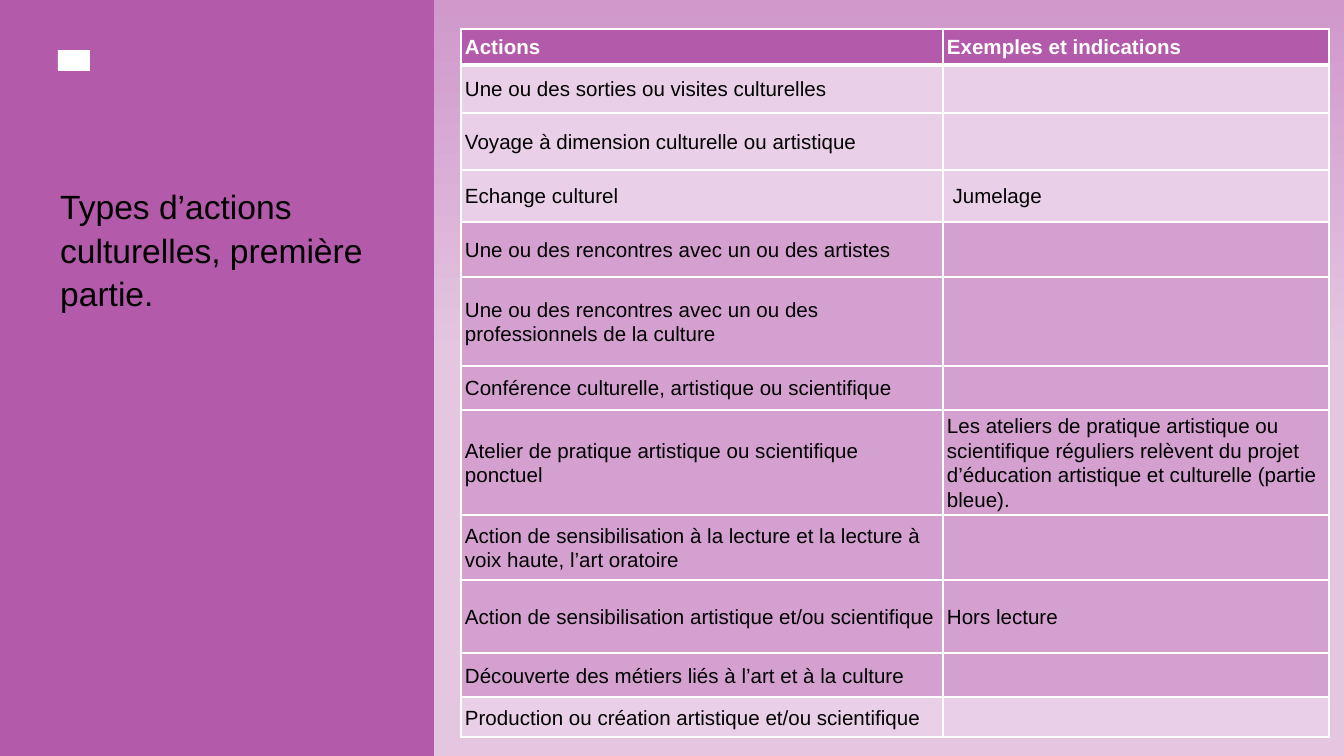
from typing import NamedTuple

from lxml import etree
from pptx import Presentation
from pptx import util as u
from pptx.dml.color import RGBColor
from pptx.enum import shapes, text
from pptx.oxml.ns import qn

EMU_PER_PX = 914400 / 134.4
FONT = "Arial"
LINE_SPACING = 1.07
COLORS = {
    "purple": "B35BAA",
    "haze_top": "D098CB",
    "haze": "E4C6E1",
    "pale": "E9CFE7",
    "mauve": "D4A0D0",
    "white": "FFFFFF",
    "black": "000000",
}


class Box(NamedTuple):
    left: int
    top: int
    width: int
    height: int


class Action(NamedTuple):
    height: int
    fill: str
    label: str
    example: str = ""


SIDE_PANEL = Box(0, 0, 434, 756)
BACKDROP = Box(434, 0, 910, 756)
MARKER = Box(58, 50, 32, 21)
TITLE = Box(47, 177, 360, 136)
TABLE_LEFT, TABLE_TOP = 461, 29
COLUMN_WIDTHS = (482, 386)

ACTIONS = [
    Action(36, "purple", "Actions", "Exemples et indications"),
    Action(48, "pale", "Une ou des sorties ou visites culturelles"),
    Action(57, "pale", "Voyage à dimension culturelle ou artistique"),
    Action(52, "pale", "Echange culturel", " Jumelage"),
    Action(55, "mauve", "Une ou des rencontres avec un ou des artistes"),
    Action(89, "mauve", "Une ou des rencontres avec un ou des professionnels de la culture"),
    Action(44, "mauve", "Conférence culturelle, artistique ou scientifique"),
    Action(97, "mauve", "Atelier de pratique artistique ou scientifique ponctuel",
           "Les ateliers de pratique artistique ou scientifique réguliers relèvent "
           "du projet d’éducation artistique et culturelle (partie bleue)."),
    Action(65, "mauve", "Action de sensibilisation à la lecture et la lecture à voix haute, "
           "l’art oratoire"),
    Action(73, "mauve", "Action de sensibilisation artistique et/ou scientifique", "Hors lecture"),
    Action(44, "mauve", "Découverte des métiers liés à l’art et à la culture"),
    Action(40, "pale", "Production ou création artistique et/ou scientifique"),
]


def px(length: int) -> u.Emu:
    return u.Emu(round(length * EMU_PER_PX))


def rgb(name: str) -> RGBColor:
    return RGBColor.from_string(COLORS[name])


def add_rectangle(slide, box: Box, color: str):
    rectangle = slide.shapes.add_shape(shapes.MSO_SHAPE.RECTANGLE, *map(px, box))
    rectangle.shadow.inherit = False
    rectangle.line.fill.background()
    rectangle.fill.solid()
    rectangle.fill.fore_color.rgb = rgb(color)
    return rectangle


def add_backdrop(slide) -> None:
    fill = add_rectangle(slide, BACKDROP, "haze").fill
    fill.gradient()
    fill.gradient_angle = 270
    for stop, color, position in zip(fill.gradient_stops, ("haze_top", "haze"), (0, 0.47)):
        stop.color.rgb = rgb(color)
        stop.position = position


def write(paragraph, words: str, size: int, color: str, bold: bool = False) -> None:
    paragraph.line_spacing = LINE_SPACING
    run = paragraph.add_run()
    run.text = words
    run.font.name = FONT
    run.font.size = u.Pt(size)
    run.font.bold = bold
    run.font.color.rgb = rgb(color)


def add_title(slide) -> None:
    title = slide.shapes.add_textbox(*map(px, TITLE)).text_frame
    title.word_wrap = True
    title.auto_size = text.MSO_AUTO_SIZE.SHAPE_TO_FIT_TEXT
    write(title.paragraphs[0], "Types d’actions culturelles, première partie.", 18, "black")


def add_borders(cell, top: int, bottom: int) -> None:
    """Draw white cell borders; widths are in points."""
    properties = cell._tc.get_or_add_tcPr()
    for side, width in (("L", 1), ("R", 1), ("T", top), ("B", bottom)):
        line = etree.SubElement(properties, qn(f"a:ln{side}"), w=str(u.Pt(width)))
        fill = etree.SubElement(line, qn("a:solidFill"))
        etree.SubElement(fill, qn("a:srgbClr"), val=COLORS["white"])


def fill_cell(cell, words: str, color: str, row: int) -> None:
    header = row == 0
    cell.margin_left = cell.margin_right = px(4)
    cell.margin_top = cell.margin_bottom = 0
    cell.vertical_anchor = text.MSO_ANCHOR.MIDDLE
    add_borders(cell, top=3 if row == 1 else 1, bottom=3 if header else 1)
    cell.fill.solid()
    cell.fill.fore_color.rgb = rgb(color)
    paragraph = cell.text_frame.paragraphs[0]
    if words:
        write(paragraph, words, 11, "white" if header else "black", header)
    else:
        # An empty cell keeps the small text size so its row does not grow.
        etree.SubElement(paragraph._p, qn("a:endParaRPr"), sz="1100")


def add_actions_table(slide) -> None:
    height = sum(action.height for action in ACTIONS)
    frame = Box(TABLE_LEFT, TABLE_TOP, sum(COLUMN_WIDTHS), height)
    table = slide.shapes.add_table(len(ACTIONS), len(COLUMN_WIDTHS), *map(px, frame)).table
    for column, width in zip(table.columns, COLUMN_WIDTHS):
        column.width = px(width)
    for row, action in enumerate(ACTIONS):
        table.rows[row].height = px(action.height)
        for column, words in enumerate((action.label, action.example)):
            fill_cell(table.cell(row, column), words, action.fill, row)


def main() -> None:
    deck = Presentation()
    deck.slide_width, deck.slide_height = px(1344), px(756)
    slide = deck.slides.add_slide(deck.slide_layouts[6])
    add_rectangle(slide, SIDE_PANEL, "purple")
    add_backdrop(slide)
    add_rectangle(slide, MARKER, "white")
    add_title(slide)
    add_actions_table(slide)
    deck.save("out.pptx")


if __name__ == "__main__":
    main()
